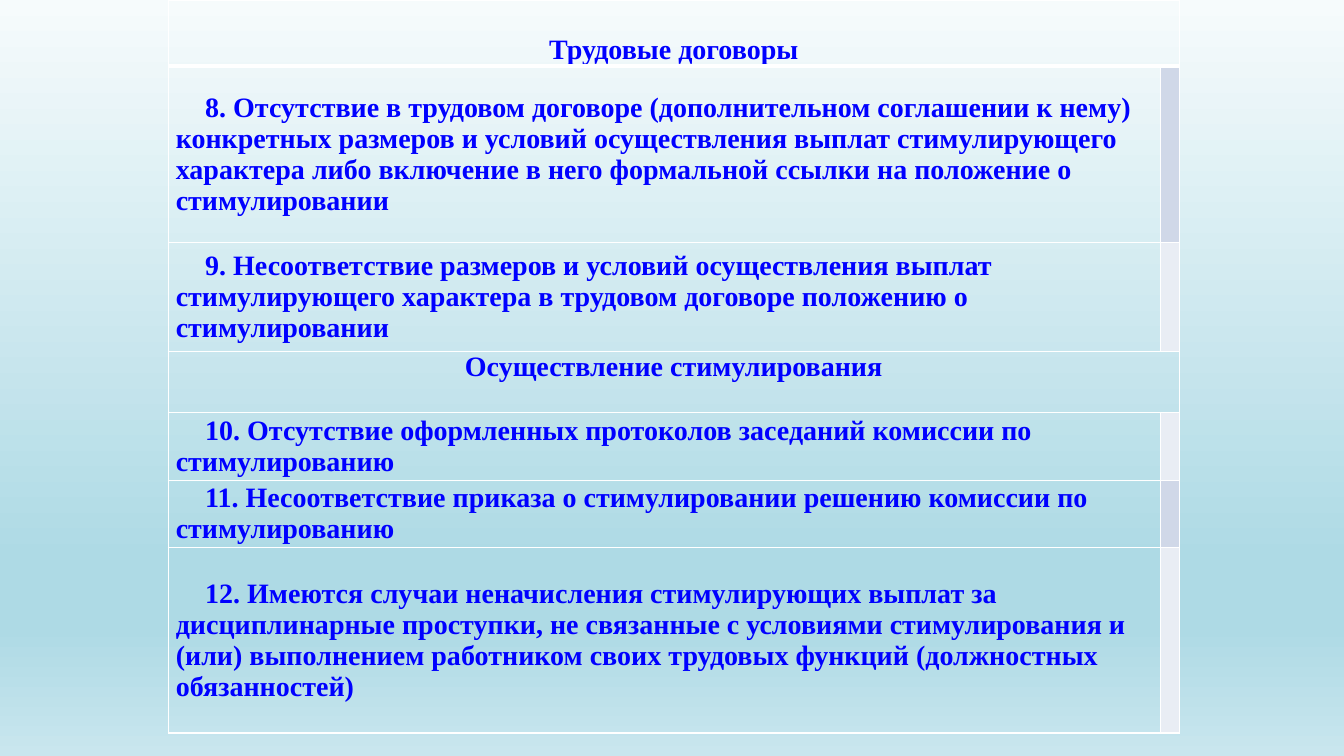
from dataclasses import dataclass

import lxml.etree
import pptx
import pptx.dml.color
import pptx.enum.text
import pptx.oxml.ns
import pptx.util

Cm, Pt = pptx.util.Cm, pptx.util.Pt
ALIGN, ANCHOR = pptx.enum.text.PP_ALIGN, pptx.enum.text.MSO_ANCHOR
qn = pptx.oxml.ns.qn

COLORS = {
    "text": "0000FF",
    "border": "FFFFFF",
    "band_dark": "D0D8E8",
    "band_light": "E9EDF4",
}
SKY = [(0, "F6FBFC"), (74, "AEDAE5"), (83, "AEDAE5"), (100, "C9E6EE")]
COLUMN_WIDTHS = (25, 0.4)


@dataclass
class Row:
    text: str
    height: float
    heading: bool = False
    anchor: ANCHOR = ANCHOR.MIDDLE


VIOLATIONS = [
    Row("Трудовые договоры", 1.66, heading=True, anchor=ANCHOR.BOTTOM),
    Row("8. Отсутствие в трудовом договоре (дополнительном соглашении к нему) "
        "конкретных размеров и условий осуществления выплат стимулирующего "
        "характера либо включение в него формальной ссылки на положение о "
        "стимулировании", 4.45),
    Row("9. Несоответствие размеров и условий осуществления выплат "
        "стимулирующего характера в трудовом договоре положению о "
        "стимулировании", 2.74),
    Row("Осуществление стимулирования", 1.55, heading=True, anchor=ANCHOR.TOP),
    Row("10. Отсутствие оформленных протоколов заседаний комиссии по "
        "стимулированию", 1.7),
    Row("11. Несоответствие приказа о стимулировании решению комиссии по "
        "стимулированию", 1.7),
    Row("12. Имеются случаи неначисления стимулирующих выплат за "
        "дисциплинарные проступки, не связанные с условиями стимулирования и "
        "(или) выполнением работником своих трудовых функций (должностных "
        "обязанностей)", 4.67),
]


def add_color(parent, color: str) -> None:
    lxml.etree.SubElement(parent, qn("a:srgbClr"), val=color)


def paint_background(slide) -> None:
    fill = slide.background.fill
    fill.gradient()
    fill.gradient_angle = 270
    stops = next(slide.element.iter(qn("a:gsLst")))
    for stop in list(stops):
        stops.remove(stop)
    for percent, color in SKY:
        add_color(lxml.etree.SubElement(stops, qn("a:gs"), pos=str(percent * 1000)), color)


def set_borders(cell, top: float = 1, bottom: float = 1) -> None:
    properties = cell._tc.get_or_add_tcPr()
    for side, width in (("L", 1), ("R", 1), ("T", top), ("B", bottom)):
        line = lxml.etree.SubElement(properties, qn(f"a:ln{side}"), w=str(Pt(width)))
        add_color(lxml.etree.SubElement(line, qn("a:solidFill")), COLORS["border"])


def write_text(cell, text: str, *, align=ALIGN.LEFT, anchor=ANCHOR.MIDDLE,
               indent: float = 0, size: float = 20, bold: bool = True,
               font: str = "Times New Roman", color: str = COLORS["text"]) -> None:
    cell.vertical_anchor = anchor
    paragraph = cell.text_frame.paragraphs[0]
    paragraph.alignment = align
    paragraph._p.get_or_add_pPr().set("indent", str(Cm(indent)))
    run = paragraph.add_run()
    run.text = text
    run.font.name, run.font.size, run.font.bold = font, Pt(size), bold
    run.font.color.rgb = pptx.dml.color.RGBColor.from_string(color)


def format_cell(cell, row_number: int, fill: str | None) -> None:
    cell.margin_left = cell.margin_right = Cm(0.19)
    cell.margin_top = cell.margin_bottom = 0
    set_borders(cell, top=3 if row_number == 1 else 1, bottom=3 if row_number == 0 else 1)
    if fill is None:
        cell.fill.background()
    else:
        cell.fill.solid()
        cell.fill.fore_color.rgb = pptx.dml.color.RGBColor.from_string(fill)


def add_violations(slide, rows: list[Row]) -> None:
    violations = slide.shapes.add_table(
        len(rows), len(COLUMN_WIDTHS), Cm(4.24), 0,
        Cm(sum(COLUMN_WIDTHS)), Cm(sum(row.height for row in rows))).table
    for column, width in zip(violations.columns, COLUMN_WIDTHS):
        column.width = Cm(width)
    for number, row in enumerate(rows):
        violations.rows[number].height = Cm(row.height)
        statement, marker = violations.cell(number, 0), violations.cell(number, 1)
        band = COLORS["band_dark" if number % 2 else "band_light"]
        format_cell(statement, number, None)
        format_cell(marker, number, None if row.heading else band)
        if row.heading:
            statement.merge(marker)
        else:
            # Small type keeps the empty cell from stretching its row
            marker.text_frame.paragraphs[0].font.size = Pt(10)
        write_text(statement, row.text, anchor=row.anchor,
                   align=ALIGN.CENTER if row.heading else ALIGN.LEFT,
                   indent=0 if row.heading else 0.74)


def main() -> None:
    presentation = pptx.Presentation()
    presentation.slide_width, presentation.slide_height = Cm(33.87), Cm(19.05)
    slide = presentation.slides.add_slide(presentation.slide_layouts[6])
    # Sky gradient behind the table
    paint_background(slide)
    # Headings and numbered violations
    add_violations(slide, VIOLATIONS)
    presentation.save("out.pptx")


if __name__ == "__main__":
    main()
